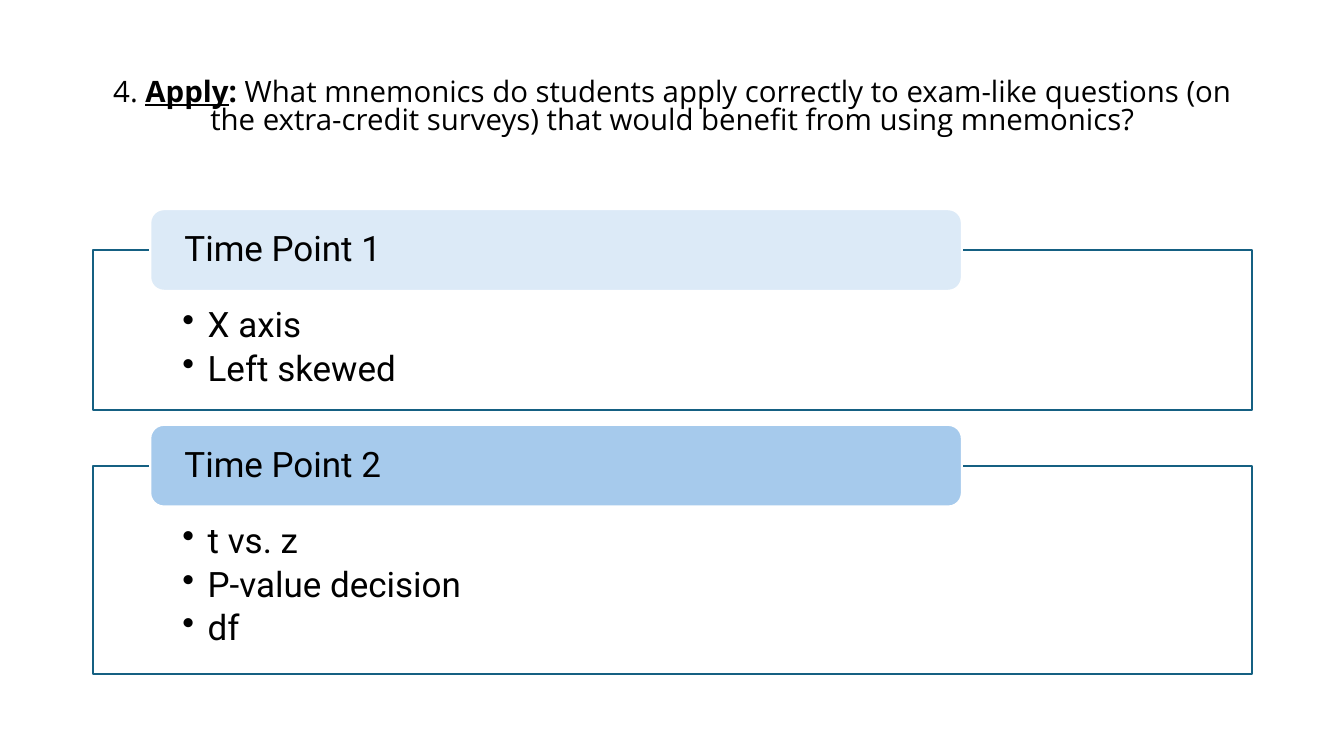
from pptx import Presentation
from pptx.dml.color import RGBColor
from pptx.enum.shapes import MSO_SHAPE
from pptx.enum.text import MSO_ANCHOR, MSO_AUTO_SIZE, PP_ALIGN
from pptx.oxml.ns import qn
from pptx.util import Inches, Pt
from lxml.etree import SubElement

HUES = {"ink": "000000", "white": "FFFFFF", "edge": "156082",
        "pale": "DCEAF7", "sky": "A6CAEC"}


def add_text(para, text, size=25, font="Roboto", bold=False, line=False):
    run = para.add_run()
    run.text = text
    run.font.size = Pt(size)
    run.font.name = font
    run.font.bold = bold
    run.font.underline = line
    run.font.color.rgb = RGBColor.from_string(HUES["ink"])


def add_box(kind, left, top, width, height, fill, edge, pads, anchor):
    box = slide.shapes.add_shape(kind, Inches(left), Inches(top),
                                 Inches(width), Inches(height))
    box.shadow.inherit = False
    box.fill.solid()
    box.fill.fore_color.rgb = RGBColor.from_string(HUES[fill])
    box.line.color.rgb = RGBColor.from_string(HUES[edge])
    box.line.width = Pt(1.5)
    frame = box.text_frame
    frame.word_wrap = True
    frame.vertical_anchor = anchor
    side, above, below = pads
    frame.margin_left = frame.margin_right = Inches(side)
    frame.margin_top, frame.margin_bottom = Inches(above), Inches(below)
    return box


deck = Presentation()
deck.slide_width, deck.slide_height = Inches(13.33), Inches(7.5)
slide = deck.slides.add_slide(deck.slide_layouts[5])

# Title, held above the middle by its bottom margin
title = slide.shapes.title
title.left, title.top = Inches(0.92), Inches(0.61)
title.width, title.height = Inches(11.5), Inches(1.24)
frame = title.text_frame
frame.auto_size = MSO_AUTO_SIZE.NONE
frame.word_wrap = True
frame.vertical_anchor = MSO_ANCHOR.MIDDLE
frame.margin_bottom = Inches(0.37)
para = frame.paragraphs[0]
para.alignment = PP_ALIGN.CENTER
para.line_spacing = 0.8
for text, bold, line in [
    ("4. ", False, False),
    ("Apply", True, True),
    (": ", True, False),
    ("What mnemonics do students apply correctly to exam-like questions "
     "(on the extra-credit surveys) that would benefit from using mnemonics?",
     False, False),
]:
    add_text(para, text, size=21, font="Open Sans", bold=bold, line=line)

# Time points: a framed list with a label across its top edge
for name, hue, top, height, items in [
    ("Time Point 1", "pale", 2.48, 1.59, ["X axis", "Left skewed"]),
    ("Time Point 2", "sky", 4.62, 2.07, ["t vs. z", "P-value decision", "df"]),
]:
    panel = add_box(MSO_SHAPE.RECTANGLE, 0.92, top, 11.5, height,
                    "white", "edge", (0.89, 0.57, 0.19), MSO_ANCHOR.TOP)
    color = panel.fill._xPr.find(qn("a:solidFill"))[0]
    SubElement(color, qn("a:alpha"), val="90000")
    for i, item in enumerate(items):
        frame = panel.text_frame
        para = frame.add_paragraph() if i else frame.paragraphs[0]
        para.alignment = PP_ALIGN.LEFT
        para.line_spacing = 0.9
        para.space_after = Pt(4.3)
        add_text(para, item)
        props = para._p.get_or_add_pPr()
        props.set("marL", str(Inches(0.25)))
        props.set("indent", str(Inches(-0.25)))
        SubElement(props, qn("a:buChar"), char="•")

    label = add_box(MSO_SHAPE.ROUNDED_RECTANGLE, 1.49, top - 0.405, 8.05, 0.81,
                    hue, "white", (0.3, 0, 0), MSO_ANCHOR.MIDDLE)
    para = label.text_frame.paragraphs[0]
    para.alignment = PP_ALIGN.LEFT
    para.line_spacing = 0.9
    add_text(para, name)

deck.save("out.pptx")
